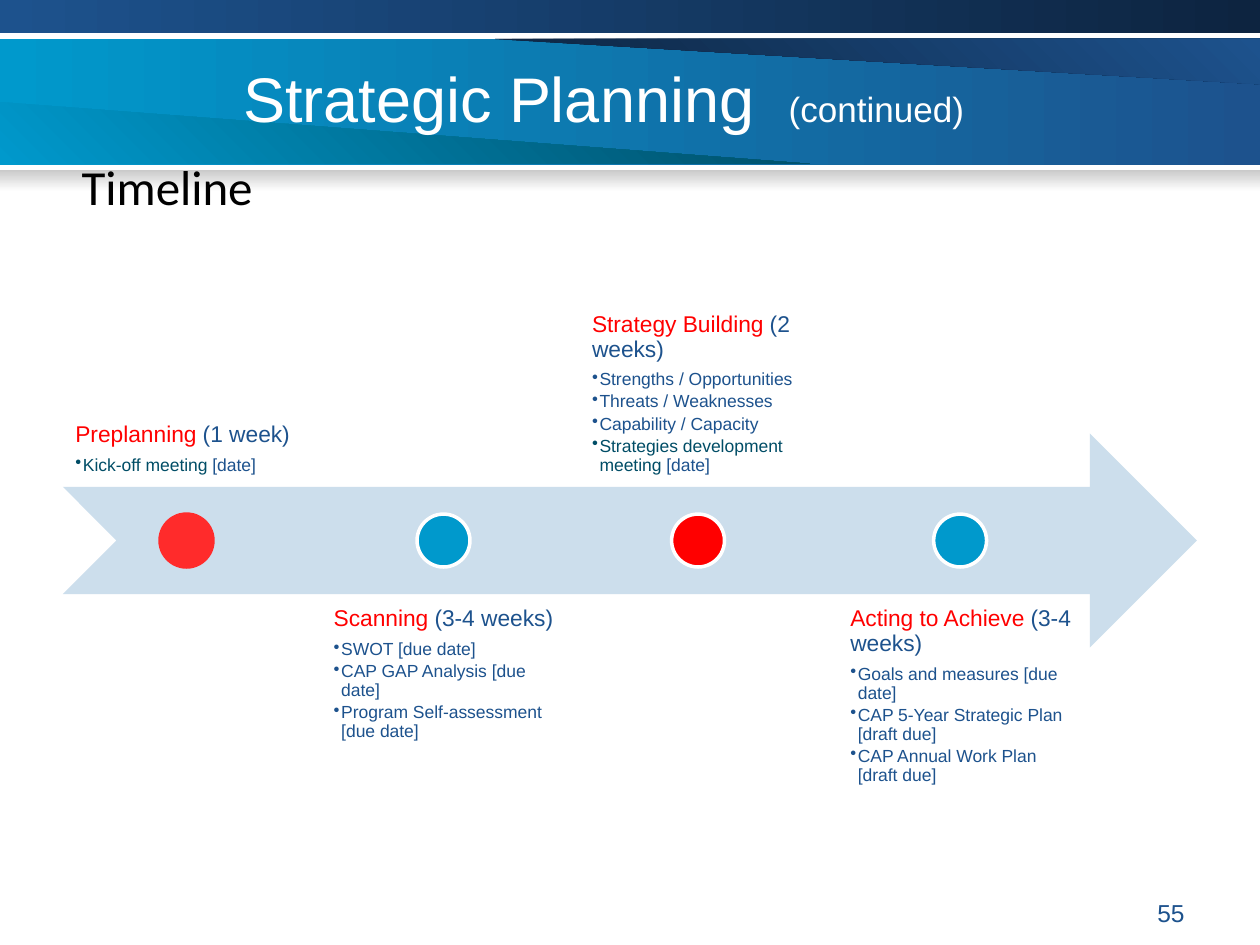
"""Build the strategic planning timeline slide."""
from lxml.etree import SubElement
from pptx import Presentation
from pptx.dml.color import RGBColor
from pptx.enum.shapes import MSO_SHAPE
from pptx.enum.text import MSO_ANCHOR, MSO_AUTO_SIZE, PP_ALIGN
from pptx.oxml.ns import qn
from pptx.util import Inches, Pt

HUES = {
    "white": "FFFFFF", "black": "000000", "gray": "CACACA", "pale": "CCDEEC",
    "navy": "1D528D", "dark": "0D2440", "cyan": "0099CC", "teal": "004D66",
    "red": "FF0000", "coral": "FF2B2B",
}

STAGES = [
    ("Preplanning", " (1 week)", 1.48, "coral", "coral",
     [[("Kick-off meeting ", "teal"), ("[date]", "navy")]]),
    ("Scanning", " (3-4 weeks)", 3.52, "cyan", "white",
     [[("SWOT [due date]", "navy")],
      [("CAP GAP Analysis [due date]", "navy")],
      [("Program Self-assessment [due date]", "navy")]]),
    ("Strategy Building", " (2 weeks)", 5.54, "red", "white",
     [[("Strengths / Opportunities", "navy")],
      [("Threats / Weaknesses", "navy")],
      [("Capability / Capacity", "navy")],
      [("Strategies development meeting ", "teal"), ("[date]", "navy")]]),
    ("Acting to Achieve", " (3-4 weeks)", 7.62, "cyan", "white",
     [[("Goals and measures [due date]", "navy")],
      [("CAP 5-Year Strategic Plan [draft due]", "navy")],
      [("CAP Annual Work Plan [draft due]", "navy")]]),
]


def color(name):
    """Look up a named colour."""
    return RGBColor.from_string(HUES[name])


def paint(shape, fill, edge=None):
    """Give a shape a flat fill and an optional edge."""
    shape.shadow.inherit = False
    shape.fill.solid()
    shape.fill.fore_color.rgb = color(fill)
    if edge:
        shape.line.color.rgb = color(edge)
        shape.line.width = Pt(2)
    else:
        shape.line.fill.background()


def blend(shape, start, end, angle):
    """Give a shape a two-colour gradient."""
    shape.shadow.inherit = False
    shape.line.fill.background()
    shape.fill.gradient()
    shape.fill.gradient_angle = angle
    for stop, name in zip(shape.fill.gradient_stops, (start, end)):
        stop.color.rgb = color(name)


def add_form(slide, kind, *box):
    """Add a preset shape at a box given in inches."""
    return slide.shapes.add_shape(kind, *map(Inches, box))


def add_wedge(slide, points, start, end):
    """Add a gradient triangle through points in inches."""
    first, *rest = [(Inches(x), Inches(y)) for x, y in points]
    pen = slide.shapes.build_freeform(*first)
    pen.add_line_segments(rest)
    blend(pen.convert_to_shape(), start, end, 45)


def add_box(slide, *box):
    """Add a wrapping text frame at a box given in inches."""
    frame = slide.shapes.add_textbox(*map(Inches, box)).text_frame
    frame.word_wrap = True
    return frame


def write(para, runs, size, face="Arial"):
    """Write coloured runs in one font."""
    para.font.size = Pt(size)
    para.font.name = face
    for text, hue in runs:
        run = para.add_run()
        run.text = text
        run.font.color.rgb = color(hue)


def add_bands(slide):
    """Draw the header bands and their wedges."""
    bands = [
        ((0, 0.31, 10, 1), "cyan", "navy", 0),
        ((0, 0, 10, 0.26), "navy", "dark", 0),
        ((0, 1.35, 10, 0.17), "gray", "white", 270),
    ]
    for box, start, end, angle in bands:
        blend(add_form(slide, MSO_SHAPE.RECTANGLE, *box), start, end, angle)
    add_wedge(slide, [(3.93, 0.31), (10, 0.67), (10, 0.31)], "dark", "navy")
    add_wedge(slide, [(0, 0.81), (6.43, 1.3), (0, 1.3)], "cyan", "teal")


def set_title(slide):
    """Place the title above the bands and write it."""
    title = slide.shapes.title
    title.element.getparent().append(title.element)
    title.left, title.top = Inches(1.83), Inches(0.3)
    title.width, title.height = Inches(7.25), Inches(0.95)
    frame = title.text_frame
    frame.auto_size = MSO_AUTO_SIZE.NONE
    frame.vertical_anchor = MSO_ANCHOR.MIDDLE
    para = frame.paragraphs[0]
    para.alignment = PP_ALIGN.LEFT
    tabs = SubElement(para._p.get_or_add_pPr(), qn("a:tabLst"))
    SubElement(tabs, qn("a:tab"), pos=str(Inches(4.33)), algn="l")
    write(para, [("Strategic Planning\t", "white"), ("(continued)", "white")], 36)
    for run, size in zip(para.runs, (36, 20)):
        run.font.size = Pt(size)


def add_item(frame, runs):
    """Add one bulleted line."""
    para = frame.add_paragraph()
    para.line_spacing = 0.9
    para.space_after = Pt(1.8)
    props = para._p.get_or_add_pPr()
    props.set("marL", str(Inches(0.06)))
    props.set("indent", str(Inches(-0.06)))
    SubElement(props, qn("a:buChar"), char="•")
    write(para, runs, 10)


def add_stage(slide, index, stage):
    """Add one stage: its text above or below and its dot."""
    name, span, mid, fill, edge, items = stage
    above = index % 2 == 0
    frame = add_box(slide, 0.5 + 2.05 * index, 2.17 if above else 4.72, 1.95, 1.7)
    frame.vertical_anchor = MSO_ANCHOR.BOTTOM if above else MSO_ANCHOR.TOP
    frame.margin_top = frame.margin_bottom = Inches(0.1)
    head = frame.paragraphs[0]
    head.line_spacing = 0.9
    head.space_after = Pt(5)
    write(head, [(name, "red"), (span, "navy")], 13)
    for runs in items:
        add_item(frame, runs)
    dot = add_form(slide, MSO_SHAPE.OVAL, mid - 0.21, 4.08, 0.42, 0.42)
    paint(dot, fill, edge)


def main():
    """Build and save the slide."""
    deck = Presentation()
    deck.slide_width, deck.slide_height = Inches(10), Inches(7.5)
    slide = deck.slides.add_slide(deck.slide_layouts[5])
    add_bands(slide)
    set_title(slide)
    label = add_box(slide, 0.55, 1.19, 8.54, 0.58).paragraphs[0]
    write(label, [("Timeline", "black")], 28, "Calibri")
    number = add_box(slide, 7.17, 7.08, 2.33, 0.27).paragraphs[0]
    number.alignment = PP_ALIGN.RIGHT
    write(number, [("55", "navy")], 14)
    arrow = add_form(slide, MSO_SHAPE.NOTCHED_RIGHT_ARROW, 0.5, 3.44, 9, 1.7)
    paint(arrow, "pale")
    for index, stage in enumerate(STAGES):
        add_stage(slide, index, stage)
    deck.save("out.pptx")


if __name__ == "__main__":
    main()
